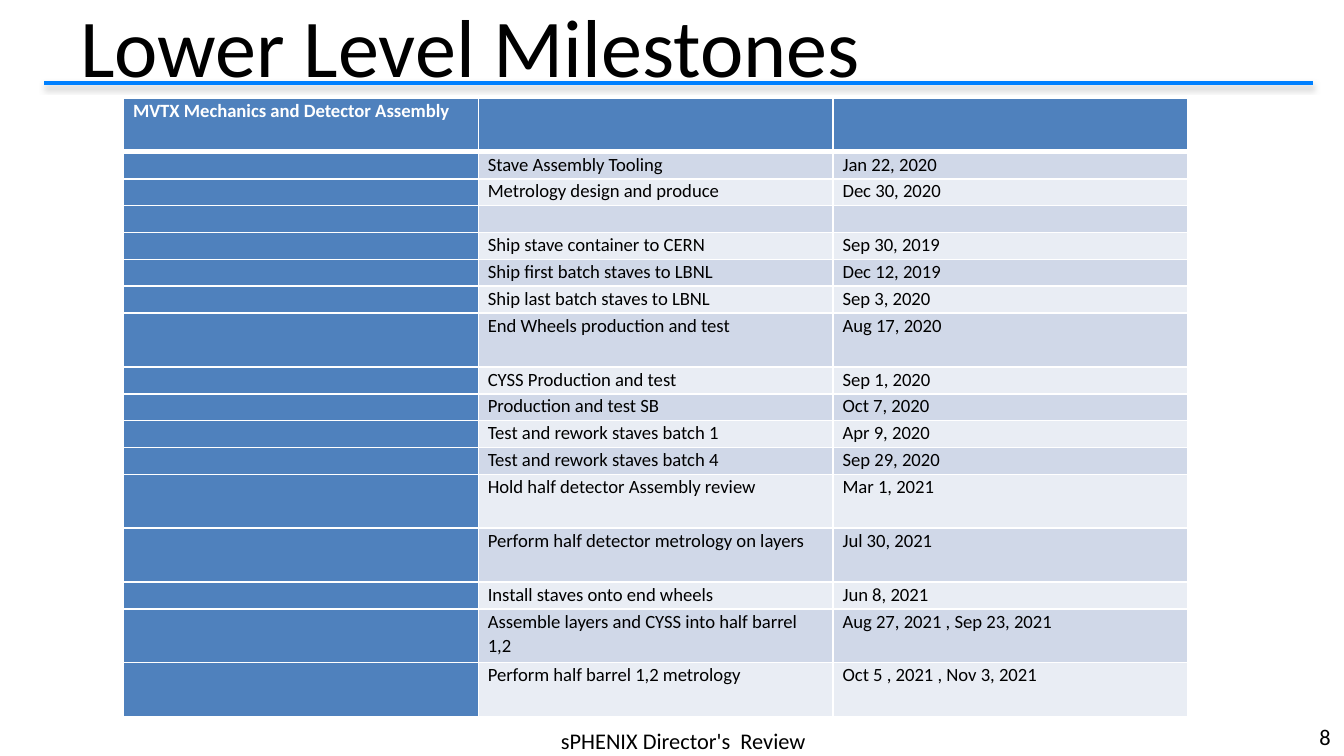
from dataclasses import dataclass

from lxml import etree
from pptx import Presentation
from pptx.dml.color import RGBColor
from pptx.enum.shapes import MSO_CONNECTOR
from pptx.enum.text import MSO_ANCHOR, PP_ALIGN
from pptx.oxml.ns import qn
from pptx.util import Inches, Pt

STRAIGHT = MSO_CONNECTOR.STRAIGHT
MIDDLE = MSO_ANCHOR.MIDDLE
LEFT, CENTER, RIGHT = PP_ALIGN.LEFT, PP_ALIGN.CENTER, PP_ALIGN.RIGHT

FONT = "Calibri"
COLORS = {
    "text": "000000",
    "white": "FFFFFF",
    "rule": "0080FF",
    "shadow": "808080",
    "header": "4F81BD",
    "band_dark": "D0D8E8",
    "band_light": "E9EDF4",
}
COL_W = 2.64
ROW_H = 0.2


@dataclass
class Label:
    text: str
    left: float
    top: float
    width: float
    height: float
    size: float
    align: PP_ALIGN


@dataclass
class Milestone:
    task: str = ""
    date: str = ""
    lines: int = 1


LABELS = [
    Label("sPHENIX Director's  Review", 3.5, 5.39, 3.17, 0.24, 12, CENTER),
    Label("8", 9.42, 5.33, 0.58, 0.3, 12, RIGHT),
    Label("Lower Level Milestones", 0.5, 0.03, 9, 0.6, 44, LEFT),
]

MILESTONES = [
    Milestone("Stave Assembly Tooling", "Jan 22, 2020"),
    Milestone("Metrology design and produce", "Dec 30, 2020"),
    Milestone(),
    Milestone("Ship stave container to CERN", "Sep 30, 2019"),
    Milestone("Ship first batch staves to LBNL", "Dec 12, 2019"),
    Milestone("Ship last batch staves to LBNL", "Sep 3, 2020"),
    Milestone("End Wheels production and test", "Aug 17, 2020", 2),
    Milestone("CYSS Production and test", "Sep 1, 2020"),
    Milestone("Production and test SB", "Oct 7, 2020"),
    Milestone("Test and rework staves batch 1", "Apr 9, 2020"),
    Milestone("Test and rework staves batch 4", "Sep 29, 2020"),
    Milestone("Hold half detector Assembly review", "Mar 1, 2021", 2),
    Milestone("Perform half detector metrology on layers", "Jul 30, 2021", 2),
    Milestone("Install staves onto end wheels", "Jun 8, 2021"),
    Milestone("Assemble layers and CYSS into half barrel 1,2",
              "Aug 27, 2021 , Sep 23, 2021", 2),
    Milestone("Perform half barrel 1,2 metrology", "Oct 5 , 2021 , Nov 3, 2021", 2),
]


def rgb(name: str) -> RGBColor:
    return RGBColor.from_string(COLORS[name])


def format_runs(p, size: float, color: str, bold: bool = False) -> None:
    for r in p.runs:
        r.font.name = FONT
        r.font.size = Pt(size)
        r.font.bold = bold
        r.font.color.rgb = rgb(color)


def add_label(s, label: Label) -> None:
    box = s.shapes.add_textbox(Inches(label.left), Inches(label.top),
                               Inches(label.width), Inches(label.height))
    tf = box.text_frame
    tf.word_wrap = True
    tf.vertical_anchor = MIDDLE
    tf.text = label.text
    p = tf.paragraphs[0]
    p.alignment = label.align
    format_runs(p, label.size, "text")


def add_rule(s) -> None:
    line = s.shapes.add_connector(STRAIGHT, Inches(0.33), Inches(0.62),
                                  Inches(9.77), Inches(0.62))
    line.line.color.rgb = rgb("rule")
    line.line.width = Pt(2.25)
    effects = etree.SubElement(line._element.spPr, qn("a:effectLst"))
    shadow = etree.SubElement(effects, qn("a:outerShdw"), blurRad=str(Pt(3.1)),
                              dist=str(Pt(1.6)), dir="5400000", rotWithShape="0")
    color = etree.SubElement(shadow, qn("a:srgbClr"), val=COLORS["shadow"])
    etree.SubElement(color, qn("a:alpha"), val="38000")


def set_borders(cell, top: float, bottom: float) -> None:
    tcPr = cell._tc.get_or_add_tcPr()
    widths = {"a:lnL": 1, "a:lnR": 1, "a:lnT": top, "a:lnB": bottom}
    for i, (tag, width) in enumerate(widths.items()):
        ln = etree.Element(qn(tag), w=str(Pt(width)))
        fill = etree.SubElement(ln, qn("a:solidFill"))
        etree.SubElement(fill, qn("a:srgbClr"), val=COLORS["white"])
        tcPr.insert(i, ln)


def fill_cell(cell, text: str, fill: str, color: str, bold: bool) -> None:
    cell.fill.solid()
    cell.fill.fore_color.rgb = rgb(fill)
    cell.margin_left = cell.margin_right = Inches(0.07)
    cell.margin_top = cell.margin_bottom = 0
    p = cell.text_frame.paragraphs[0]
    p.line_spacing = 1.07
    if text:
        p.text = text
        format_runs(p, 10, color, bold)
    else:
        # The end mark keeps an empty cell from stretching its row
        etree.SubElement(p._p, qn("a:endParaRPr"), sz="1000")


def add_milestone_table(s, milestones: list[Milestone]) -> None:
    heights = [2] + [m.lines for m in milestones]
    rows = [("MVTX Mechanics and Detector Assembly", "", "")]
    rows += [("", m.task, m.date) for m in milestones]
    table = s.shapes.add_table(len(rows), 3, Inches(0.92), Inches(0.73),
                               Inches(3 * COL_W), Inches(sum(heights) * ROW_H)).table
    for col in table.columns:
        col.width = Inches(COL_W)
    for i, row in enumerate(rows):
        table.rows[i].height = Inches(heights[i] * ROW_H)
        band = "band_dark" if i % 2 else "band_light"
        for j, text in enumerate(row):
            heading = i == 0 or j == 0
            cell = table.cell(i, j)
            fill_cell(cell, text, "header" if heading else band,
                      "white" if heading else "text", heading)
            set_borders(cell, 3 if i == 1 else 1, 3 if i == 0 else 1)


def main() -> None:
    # Widescreen 16:9 page
    prs = Presentation()
    prs.slide_width = Inches(10)
    prs.slide_height = Inches(10 * 9 / 16)
    s = prs.slides.add_slide(prs.slide_layouts[6])

    # Title rule, then title, footer and page number
    add_rule(s)
    for label in LABELS:
        add_label(s, label)

    # Milestones
    add_milestone_table(s, MILESTONES)
    prs.save("out.pptx")


if __name__ == "__main__":
    main()
